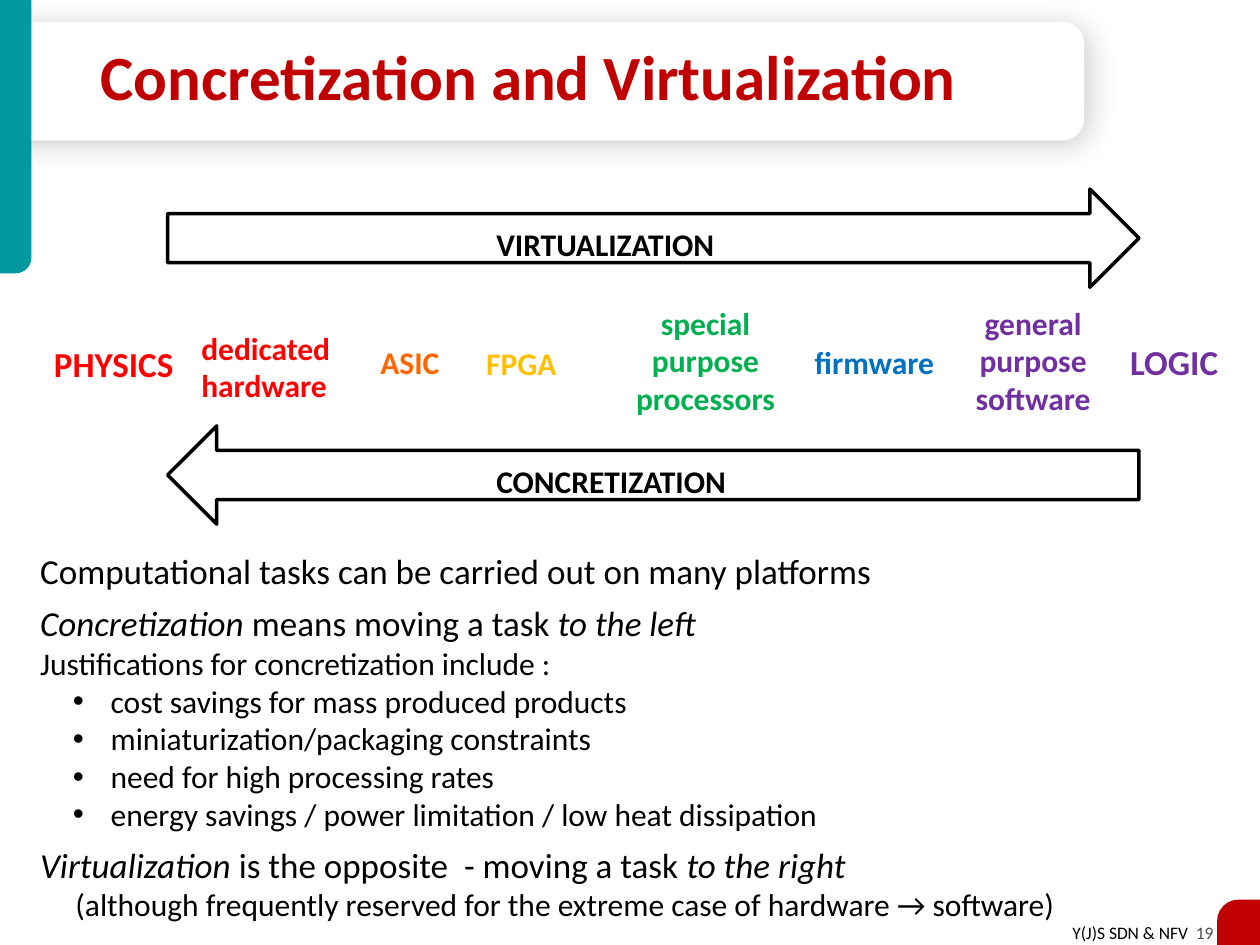
from lxml.etree import SubElement
from pptx import Presentation
from pptx.dml.color import RGBColor
from pptx.enum.shapes import MSO_SHAPE
from pptx.enum.text import MSO_ANCHOR, PP_ALIGN
from pptx.oxml.ns import qn
from pptx.util import Inches, Pt

BLACK = RGBColor(0x00, 0x00, 0x00)
WHITE = RGBColor(0xFF, 0xFF, 0xFF)
GRAY = RGBColor(0x4D, 0x4D, 0x4D)
TEAL = RGBColor(0x00, 0x98, 0xA1)
CRIMSON = RGBColor(0xC0, 0x00, 0x00)
RED = RGBColor(0xFF, 0x00, 0x00)
ORANGE = RGBColor(0xFF, 0x66, 0x00)
AMBER = RGBColor(0xFF, 0xC0, 0x00)
GREEN = RGBColor(0x00, 0xB0, 0x50)
BLUE = RGBColor(0x00, 0x70, 0xC0)
PURPLE = RGBColor(0x70, 0x30, 0xA0)


def add_run(paragraph, text, font="Calibri", size=18, color=BLACK, bold=False, italic=False):
    run = paragraph.add_run()
    run.text = text
    run.font.name = font
    run.font.size = Pt(size)
    run.font.color.rgb = color
    run.font.bold = bold
    run.font.italic = italic


def set_indent(paragraph, left, bullet=None, hanging=0):
    properties = paragraph._p.get_or_add_pPr()
    properties.set("marL", str(Inches(left)))
    properties.set("indent", str(-Inches(hanging)))
    if bullet:
        SubElement(properties, qn("a:buFont"), typeface="Arial")
        SubElement(properties, qn("a:buChar"), char=bullet)


class SlideBuilder:
    def __init__(self, slide, font="Calibri"):
        self.slide = slide
        self.font = font

    def textbox(self, left, top, width, height, wrap=True, anchor=MSO_ANCHOR.TOP):
        box = self.slide.shapes.add_textbox(
            Inches(left), Inches(top), Inches(width), Inches(height))
        box.text_frame.word_wrap = wrap
        box.text_frame.vertical_anchor = anchor
        return box.text_frame

    def label(self, text, left, top, width, height, align=PP_ALIGN.LEFT, **style):
        frame = self.textbox(left, top, width, height)
        for index, line in enumerate(text.split("\n")):
            paragraph = frame.add_paragraph() if index else frame.paragraphs[0]
            paragraph.alignment = align
            add_run(paragraph, line, font=self.font, bold=True, **style)

    def shape(self, preset, left, top, width, height, fill=None, line=None,
              flip=None, rotation=0, adjustments=()):
        shape = self.slide.shapes.add_shape(
            preset, Inches(left), Inches(top), Inches(width), Inches(height))
        shape.shadow.inherit = False
        shape.rotation = rotation
        for index, value in enumerate(adjustments):
            shape.adjustments[index] = value
        if fill is None:
            shape.fill.background()
        else:
            shape.fill.solid()
            shape.fill.fore_color.rgb = fill
        if line is None:
            shape.line.fill.background()
        else:
            shape.line.color.rgb = line
            shape.line.width = Pt(2)
        if flip:
            shape._element.spPr.find(qn("a:xfrm")).set(flip, "1")
        return shape

    def soft_shadow(self, shape, blur, distance, angle, opacity):
        effects = shape._element.spPr.find(qn("a:effectLst"))
        shadow = SubElement(
            effects, qn("a:outerShdw"), blurRad=str(Pt(blur)), dist=str(Pt(distance)),
            dir=str(angle * 60000), algn="ctr", rotWithShape="0")
        color = SubElement(shadow, qn("a:srgbClr"), val=str(BLACK))
        SubElement(color, qn("a:alpha"), val=str(opacity * 1000))

    def direction_arrow(self, text, top, flip=None):
        self.shape(MSO_SHAPE.RIGHT_ARROW, 1.33, top, 7.71, 0.78, line=BLACK, flip=flip)
        self.label(text, 3.84, top + 0.24, 2.18, 0.38)


def main():
    presentation = Presentation()
    presentation.slide_width = Inches(10)
    presentation.slide_height = Inches(7.5)
    builder = SlideBuilder(presentation.slides.add_slide(presentation.slide_layouts[6]))

    # Footer
    footer = builder.textbox(8.37, 7.27, 1.36, 0.27, wrap=False).paragraphs[0]
    footer.alignment = PP_ALIGN.RIGHT
    add_run(footer, "Y(J)S SDN & NFV  ", size=10)
    add_run(footer, "19", size=10, color=GRAY)

    # Title banner and corner accents
    banner = builder.shape(MSO_SHAPE.ROUND_2_SAME_RECTANGLE, 3.83, -3.66, 0.94, 8.61,
                           fill=WHITE, rotation=90, adjustments=(0.184, 0))
    builder.soft_shadow(banner, blur=17, distance=3, angle=45, opacity=19)
    builder.shape(MSO_SHAPE.ROUND_1_RECTANGLE, 0, 0, 0.25, 2.17,
                  fill=TEAL, flip="flipV", adjustments=(0.5,))
    builder.shape(MSO_SHAPE.ROUND_1_RECTANGLE, 9.66, 7.14, 0.34, 0.36,
                  fill=CRIMSON, flip="flipH", adjustments=(0.5,))
    title = builder.textbox(0.7, 0.29, 7.4, 0.71, anchor=MSO_ANCHOR.MIDDLE).paragraphs[0]
    title.line_spacing = 0.85
    add_run(title, "Concretization and Virtualization", size=36, color=CRIMSON, bold=True)

    # Platforms from physics to logic
    center = PP_ALIGN.CENTER
    builder.label("PHYSICS", 0.33, 2.67, 1.17, 0.41, size=20, color=RED)
    builder.label("LOGIC", 8.87, 2.65, 0.92, 0.41, size=20, color=PURPLE)
    builder.label("dedicated hardware", 1.5, 2.56, 1.34, 0.66, color=RED)
    builder.label("ASIC", 2.92, 2.67, 0.75, 0.38, color=ORANGE)
    builder.label("FPGA", 3.76, 2.68, 0.84, 0.38, color=AMBER)
    builder.label("special purpose processors", 4.93, 2.36, 1.34, 0.95, center, color=GREEN)
    builder.label("general\npurpose\nsoftware", 7.53, 2.36, 1.34, 0.95, center, color=PURPLE)
    builder.label("firmware", 6.27, 2.67, 1.34, 0.38, center, color=BLUE)

    # Opposite directions
    builder.direction_arrow("VIRTUALIZATION", 1.5)
    builder.direction_arrow("CONCRETIZATION", 3.38, flip="flipH")

    # Explanation
    body = builder.textbox(0.22, 4.31, 9.42, 3.21)
    add_run(body.paragraphs[0], "Computational tasks can be carried out on many platforms", size=20)

    def add_definition(term, meaning, direction):
        paragraph = body.add_paragraph()
        paragraph.space_before = Pt(6)
        add_run(paragraph, term, size=20, italic=True)
        add_run(paragraph, meaning, size=20)
        add_run(paragraph, direction, size=20, italic=True)

    add_definition("Concretization ", "means moving a task ", "to the left")
    add_run(body.add_paragraph(), "Justifications for concretization include :")
    for justification in (
        "cost savings for mass produced products",
        "miniaturization/packaging constraints",
        "need for high processing rates",
        "energy savings / power limitation / low heat dissipation",
    ):
        item = body.add_paragraph()
        set_indent(item, 0.56, bullet="•", hanging=0.3)
        add_run(item, justification)
    add_definition("Virtualization ", "is the opposite  - moving a task ", "to the right")
    remark = body.add_paragraph()
    set_indent(remark, 0.28)
    add_run(remark, "(although frequently reserved for the extreme case of hardware → software)")

    presentation.save("out.pptx")


if __name__ == "__main__":
    main()
